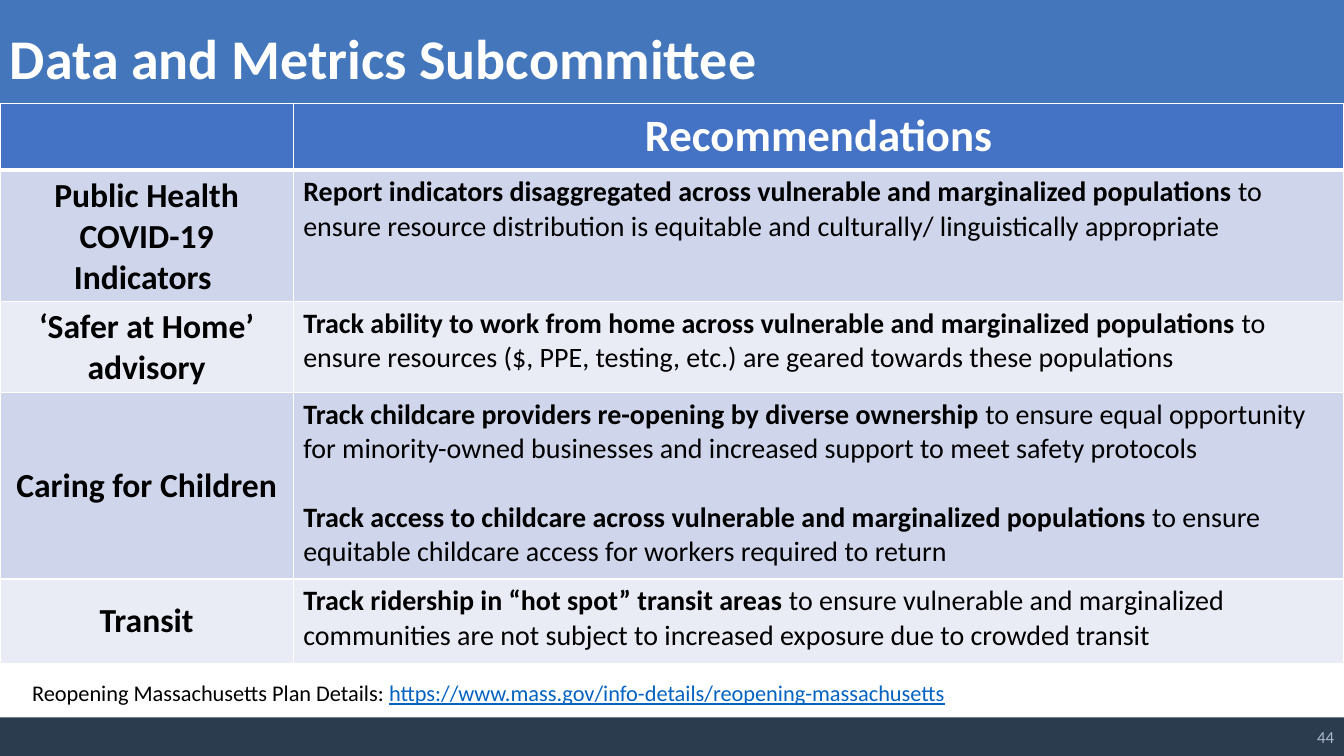
from lxml.etree import SubElement, fromstring
from pptx import Presentation
from pptx.dml.color import RGBColor
from pptx.enum.shapes import MSO_SHAPE as Shape
from pptx.enum.text import MSO_ANCHOR as Anchor, PP_ALIGN as Align
from pptx.oxml.ns import nsdecls, qn
from pptx.util import Cm, Pt

TITLE = "Data and Metrics Subcommittee"
HEADS = ["", "Recommendations"]
# Topic, row height in cm, recommendations as (bold part, plain part)
ROWS = [
    ("Public Health COVID-19 Indicators ", 3.3, [
        ("Report indicators disaggregated across vulnerable and marginalized populations",
         " to ensure resource distribution is equitable and culturally/ "
         "linguistically appropriate")]),
    ("‘Safer at Home’ advisory", 2.3, [
        ("Track ability to work from home across vulnerable and marginalized populations ",
         "to ensure resources ($, PPE, testing, etc.) are geared towards these populations")]),
    ("Caring for Children", 4.7, [
        ("Track childcare providers re-opening by diverse ownership ",
         "to ensure equal opportunity for minority-owned businesses and increased "
         "support to meet safety protocols"),
        ("Track access to childcare across vulnerable and marginalized populations ",
         "to ensure equitable childcare access for workers required to return")]),
    ("Transit", 2.13, [
        ("Track ridership in “hot spot” transit areas ",
         "to ensure vulnerable and marginalized communities are not subject to "
         "increased exposure due to crowded transit")]),
]
NOTE = "Reopening Massachusetts Plan Details: "
LINK = "https://www.mass.gov/info-details/reopening-massachusetts"
PAGE = "44"

WIDTH, HEIGHT = 33.87, 19.05
SIDE = 7.39
HEAD = 1.68
FONT = "Calibri"
WHITE = RGBColor(0xFF, 0xFF, 0xFF)
BLACK = RGBColor(0x00, 0x00, 0x00)
BAND = RGBColor(0x43, 0x76, 0xBB)
NAVY = RGBColor(0x2A, 0x3C, 0x4E)
BLUE = RGBColor(0x44, 0x72, 0xC4)
TINTS = [RGBColor(0xCF, 0xD5, 0xEA), RGBColor(0xE9, 0xEB, 0xF5)]
LINKED = RGBColor(0x05, 0x63, 0xC1)
GREY = RGBColor(0xAD, 0xB9, 0xCA)

prs = Presentation()
prs.slide_width, prs.slide_height = Cm(WIDTH), Cm(HEIGHT)
slide = prs.slides.add_slide(prs.slide_layouts[6])


def add_bar(top, height, color):
    bar = slide.shapes.add_shape(Shape.RECTANGLE, 0, Cm(top), Cm(WIDTH), Cm(height))
    bar.shadow.inherit = False
    bar.fill.solid()
    bar.fill.fore_color.rgb = color
    bar.line.fill.background()


def style(run, size, color, bold=False):
    run.font.name, run.font.size = FONT, Pt(size)
    run.font.color.rgb, run.font.bold = color, bold


def add_text(box, text, size, color, bold=False):
    """Add a text box and return its first paragraph."""
    frame = slide.shapes.add_textbox(*map(Cm, box)).text_frame
    frame.word_wrap = True
    frame.text = text
    para = frame.paragraphs[0]
    style(para.runs[0], size, color, bold)
    return para


def paint(cell, color, top, base):
    """Fill a cell and give it white borders; top and base are in points."""
    cell.fill.solid()
    cell.fill.fore_color.rgb = color
    props = cell._tc.get_or_add_tcPr()
    for spot, (side, wide) in enumerate([("L", 1), ("R", 1), ("T", top), ("B", base)]):
        line = fromstring(f'<a:ln{side} {nsdecls("a")} w="{Pt(wide)}"/>')
        fill = SubElement(line, qn("a:solidFill"))
        SubElement(fill, qn("a:srgbClr"), val=str(WHITE))
        props.insert(spot, line)


def label(cell, text, size, color):
    para = cell.text_frame.paragraphs[0]
    para.text = text
    para.alignment = Align.CENTER
    for run in para.runs:
        style(run, size, color, True)


add_bar(0, 2.72, BAND)
add_bar(18.08, HEIGHT - 18.08, NAVY)
add_text((0, 0.46, 33.05, 1.96), TITLE, 40, WHITE, True)

note = add_text((0.56, 16.99, 29.08, 1.0), NOTE, 16, BLACK)
link = note.add_run()
link.text = LINK
style(link, 16, LINKED)
link.font.underline = True

tall = HEAD + sum(height for _, height, _ in ROWS)
table = slide.shapes.add_table(len(ROWS) + 1, 2, 0, Cm(2.61), Cm(WIDTH), Cm(tall)).table
table.columns[0].width, table.columns[1].width = Cm(SIDE), Cm(WIDTH - SIDE)
table.rows[0].height = Cm(HEAD)
for col, head in enumerate(HEADS):
    cell = table.cell(0, col)
    paint(cell, BLUE, 1, 3)
    label(cell, head, 32, WHITE)

for row, (topic, height, items) in enumerate(ROWS, 1):
    table.rows[row].height = Cm(height)
    name, body = table.cell(row, 0), table.cell(row, 1)
    for cell in (name, body):
        paint(cell, TINTS[(row - 1) % 2], 3 if row == 1 else 1, 1)
    name.vertical_anchor = Anchor.MIDDLE
    label(name, topic, 24, BLACK)
    frame = body.text_frame
    for rank, item in enumerate(items):
        para = frame.add_paragraph() if rank else frame.paragraphs[0]
        para.space_before = Pt(24.4 if rank else 0)
        for text, bold in zip(item, (True, False)):
            run = para.add_run()
            run.text = text
            style(run, 20, BLACK, bold)

page = add_text((26.26, 18.06, 7.61, 1.01), PAGE, 12, GREY)
page.alignment = Align.RIGHT
slide.shapes[-1].text_frame.vertical_anchor = Anchor.MIDDLE

prs.save("out.pptx")
